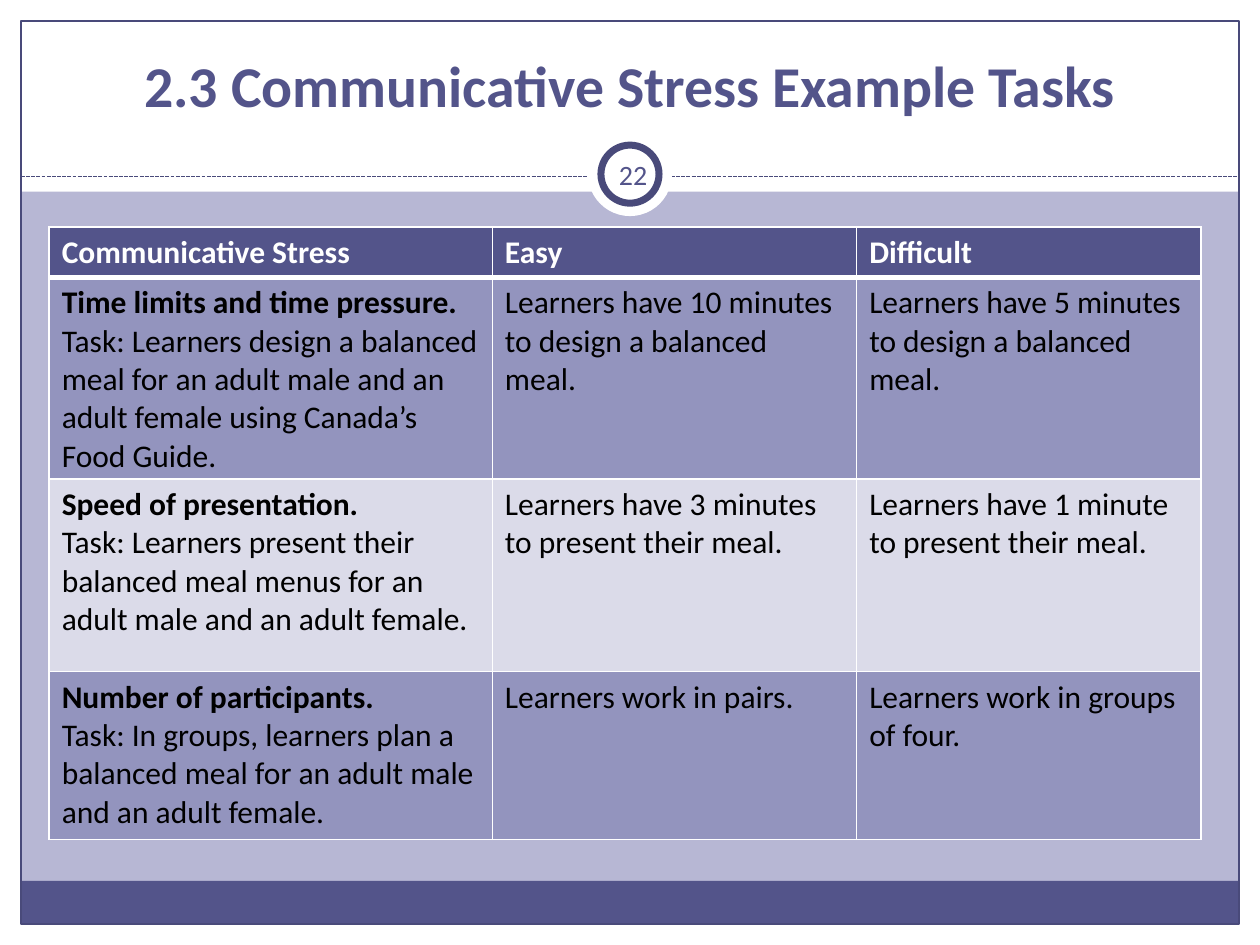
from dataclasses import dataclass
from lxml.etree import SubElement
from pptx import Presentation
from pptx.dml.color import RGBColor
from pptx.enum.dml import MSO_LINE_DASH_STYLE as Dash
from pptx.enum.shapes import MSO_CONNECTOR as Connector, MSO_SHAPE as Shape
from pptx.enum.text import MSO_ANCHOR as Anchor, PP_ALIGN as Align
from pptx.oxml.ns import qn
from pptx.util import Pt

WIDTH, HEIGHT = 720, 540
MARGIN = 12
HEADER_HEIGHT = 109.5
RULE_Y = 100.8
CENTER_X = WIDTH / 2

HEADINGS = ["Communicative Stress", "Easy", "Difficult"]
TASKS = [
    ("Time limits and time pressure.",
     "Task: Learners design a balanced meal for an adult male and an adult "
     "female using Canada’s Food Guide.",
     "Learners have 10 minutes to design a balanced meal.",
     "Learners have 5 minutes to design a balanced meal."),
    ("Speed of presentation.",
     "Task: Learners present their balanced meal menus for an adult male and "
     "an adult female.",
     "Learners have 3 minutes to present their meal.",
     "Learners have 1 minute to present their meal."),
    ("Number of participants.",
     "Task: In groups, learners plan a balanced meal for an adult male and an "
     "adult female.",
     "Learners work in pairs.",
     "Learners work in groups of four."),
]
COLUMN_WIDTHS = [253.3, 208.2, 196.8]
ROW_HEIGHTS = [28.8, 113.8, 110.2, 95.8]


def color(hex_text):
    return RGBColor.from_string(hex_text)


def write(para, text, *, size=18, font="Calibri", ink="000000", bold=False,
          align=Align.LEFT):
    para.alignment = align
    span = para.add_run()
    span.text = text
    span.font.name = font
    span.font.size = Pt(size)
    span.font.bold = bold
    span.font.color.rgb = color(ink)


def add_border(cell, side, width, ink):
    line = SubElement(cell._tc.get_or_add_tcPr(), qn(f"a:ln{side}"),
                      w=str(Pt(width)))
    fill = SubElement(line, qn("a:solidFill"))
    SubElement(fill, qn("a:srgbClr"), val=ink)


@dataclass
class Painter:
    page: object
    white: str = "FFFFFF"
    accent: str = "53548A"
    outline: str = "494A7A"
    backdrop: str = "B7B7D4"
    dark_row: str = "9394BE"
    light_row: str = "DBDBE9"

    def background(self):
        fill = self.page.background.fill
        fill.solid()
        fill.fore_color.rgb = color(self.backdrop)

    def shape(self, kind, left, top, width, height, fill=None, line_width=0):
        shape = self.page.shapes.add_shape(
            kind, Pt(left), Pt(top), Pt(width), Pt(height))
        shape.shadow.inherit = False
        if fill:
            shape.fill.solid()
            shape.fill.fore_color.rgb = color(fill)
        else:
            shape.fill.background()
        if line_width:
            shape.line.color.rgb = color(self.outline)
            shape.line.width = Pt(line_width)
        else:
            shape.line.fill.background()

    def circle(self, center_y, diameter, line_width=0):
        self.shape(Shape.OVAL, CENTER_X - diameter / 2, center_y - diameter / 2,
                   diameter, diameter, self.white, line_width)

    def dashed_rule(self, left, right, y):
        rule = self.page.shapes.add_connector(
            Connector.STRAIGHT, Pt(left), Pt(y), Pt(right), Pt(y))
        rule.line.color.rgb = color(self.outline)
        rule.line.width = Pt(0.75)
        rule.line.dash_style = Dash.SQUARE_DOT
        SubElement(rule._element.spPr, qn("a:effectLst"))

    def text(self, text, left, top, width, height, inset=3.6, **style):
        box = self.page.shapes.add_textbox(
            Pt(left), Pt(top), Pt(width), Pt(height))
        frame = box.text_frame
        frame.word_wrap = True
        frame.vertical_anchor = Anchor.MIDDLE
        frame.margin_left = frame.margin_right = Pt(inset)
        frame.margin_top = frame.margin_bottom = Pt(inset)
        write(frame.paragraphs[0], text, ink=self.accent, align=Align.CENTER,
              **style)

    def cell(self, cell, fill, top_line=1, bottom_line=1):
        for side, width in zip("LRTB", (1, 1, top_line, bottom_line)):
            add_border(cell, side, width, self.white)
        cell.fill.solid()
        cell.fill.fore_color.rgb = color(fill)

    def table(self, left, top):
        table = self.page.shapes.add_table(
            len(ROW_HEIGHTS), len(COLUMN_WIDTHS), Pt(left), Pt(top),
            Pt(sum(COLUMN_WIDTHS)), Pt(sum(ROW_HEIGHTS))).table
        for column, width in zip(table.columns, COLUMN_WIDTHS):
            column.width = Pt(width)
        for row, height in zip(table.rows, ROW_HEIGHTS):
            row.height = Pt(height)

        for cell, heading in zip(table.rows[0].cells, HEADINGS):
            self.cell(cell, self.accent, bottom_line=3)
            write(cell.text_frame.paragraphs[0], heading, ink=self.white,
                  bold=True)

        for index, (name, task, easy, difficult) in enumerate(TASKS, 1):
            cells = table.rows[index].cells
            for cell, text in zip(cells, (name, easy, difficult)):
                self.cell(cell, self.dark_row if index % 2 else self.light_row,
                          top_line=3 if index == 1 else 1)
                write(cell.text_frame.paragraphs[0], text, bold=text == name)
            write(cells[0].text_frame.add_paragraph(), task)


def main():
    deck = Presentation()
    deck.slide_width, deck.slide_height = Pt(WIDTH), Pt(HEIGHT)
    painter = Painter(deck.slides.add_slide(deck.slide_layouts[6]))
    inner_width = WIDTH - 2 * MARGIN

    # White margins and header
    painter.background()
    for area in [(0, HEIGHT - MARGIN, WIDTH, MARGIN),
                 (0, 0, WIDTH, HEADER_HEIGHT),
                 (0, 0, MARGIN, HEIGHT),
                 (WIDTH - MARGIN, 0, MARGIN, HEIGHT)]:
        painter.shape(Shape.RECTANGLE, *area, fill=painter.white)

    # Footer band, frame and header rule
    painter.shape(Shape.RECTANGLE, MARGIN, 503.3, inner_width, 24.7,
                  fill=painter.accent)
    painter.shape(Shape.RECTANGLE, MARGIN, MARGIN, inner_width,
                  HEIGHT - 2 * MARGIN, line_width=0.75)
    painter.dashed_rule(MARGIN, WIDTH - MARGIN, RULE_Y)

    # Page number badge
    badge_y = 99.5
    painter.circle(badge_y, 48)
    painter.circle(badge_y, 33.2, line_width=4)

    # Title, task table and page number
    painter.text("2.3 Communicative Stress Example Tasks", 24, 11.5, 672, 73.5,
                 size=33, bold=True)
    painter.table(28.1, 129.6)
    painter.text("22", 343.4, 80.9, 36.7, 37.4, size=16)

    deck.save("out.pptx")


if __name__ == "__main__":
    main()
